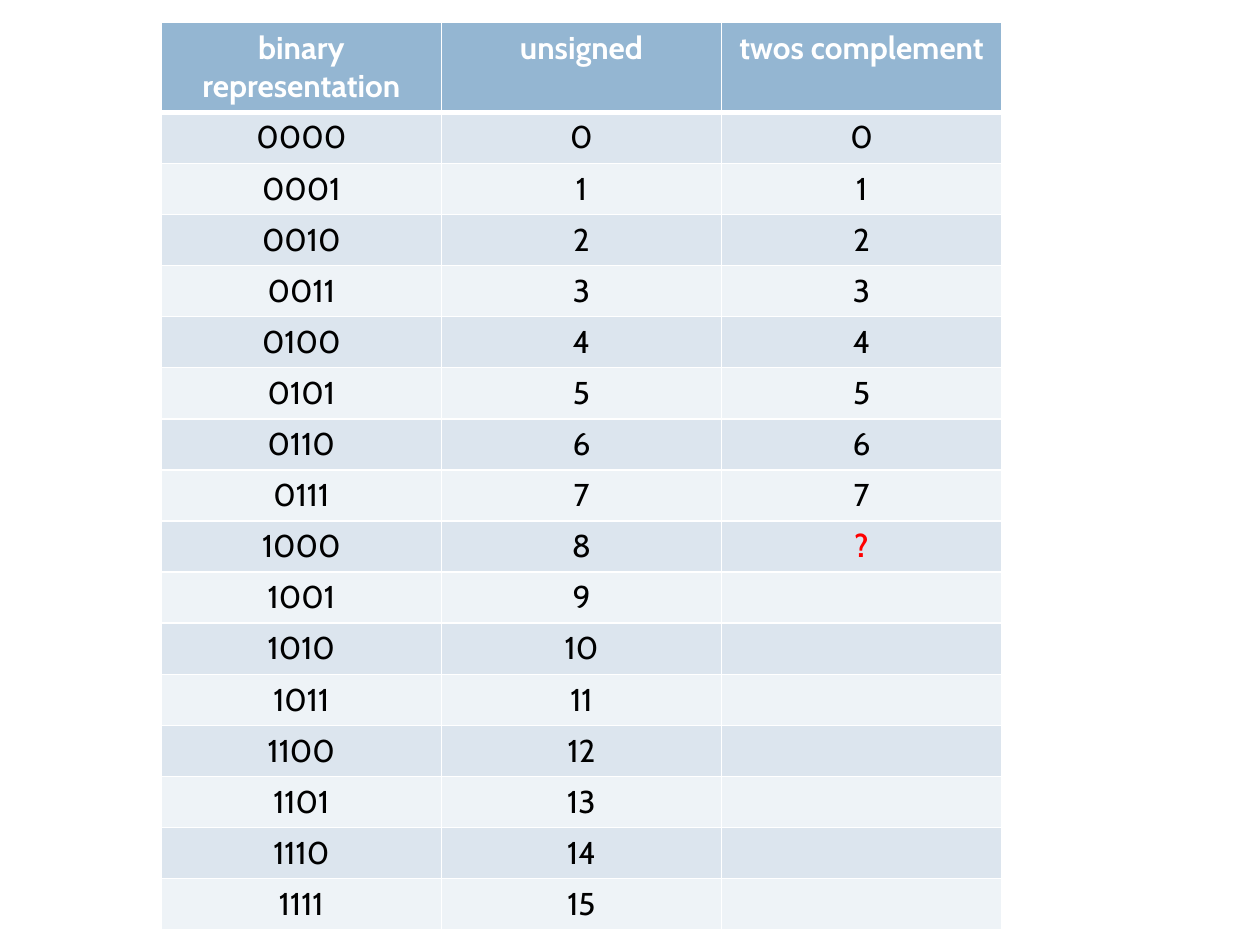
from lxml import etree
from pptx import Presentation
from pptx.dml.color import RGBColor
from pptx.enum import text
from pptx.oxml import ns
from pptx.util import Inches, Pt

WHITE = RGBColor(0xFF, 0xFF, 0xFF)
BLACK = RGBColor(0x00, 0x00, 0x00)
RED = RGBColor(0xFF, 0x00, 0x00)
HEADER_BLUE = RGBColor(0x94, 0xB6, 0xD2)
BANDS = [RGBColor(0xEE, 0xF3, 0xF7), RGBColor(0xDC, 0xE5, 0xEE)]

HEADINGS = ["binary representation", "unsigned", "twos complement"]
HEADER_HEIGHT, BODY_HEIGHT = Inches(0.7), Inches(6.49)
BITS = 4
COUNT = 2 ** BITS
SIGN_START = COUNT // 2


def set_borders(cell, widths):
    """Draw white borders; widths maps the sides L, R, T, B to points."""
    tc_pr = cell._tc.get_or_add_tcPr()
    for i, (side, width) in enumerate(widths.items()):
        ln = etree.Element(ns.qn(f"a:ln{side}"), w=str(Pt(width)))
        fill = etree.SubElement(ln, ns.qn("a:solidFill"))
        etree.SubElement(fill, ns.qn("a:srgbClr"), val=str(WHITE))
        tc_pr.insert(i, ln)


prs = Presentation()
prs.slide_width, prs.slide_height = Inches(10), Inches(7.5)
s = prs.slides.add_slide(prs.slide_layouts[6])

rows = [HEADINGS]
for n in range(COUNT):
    signed = str(n) if n < SIGN_START else "?" if n == SIGN_START else ""
    rows.append([f"{n:0{BITS}b}", str(n), signed])

table = s.shapes.add_table(
    len(rows), len(HEADINGS), Inches(1.28), Inches(0.18),
    Inches(6.67), HEADER_HEIGHT + BODY_HEIGHT).table

for i, values in enumerate(rows):
    header = i == 0
    table.rows[i].height = HEADER_HEIGHT if header else BODY_HEIGHT // COUNT
    for j, value in enumerate(values):
        cell = table.cell(i, j)
        cell.fill.solid()
        cell.fill.fore_color.rgb = HEADER_BLUE if header else BANDS[i % 2]
        set_borders(cell, {"L": 1, "R": 1, "T": 3 if i == 1 else 1,
                           "B": 3 if header else 1})
        p = cell.text_frame.paragraphs[0]
        p.alignment = text.PP_ALIGN.CENTER
        if not value:
            continue
        r = p.add_run()
        r.text = value
        font = {"name": "Cabin", "size": Pt(18), "bold": header or value == "?"}
        for name, setting in font.items():
            setattr(r.font, name, setting)
        r.font.color.rgb = WHITE if header else RED if value == "?" else BLACK

prs.save("out.pptx")
